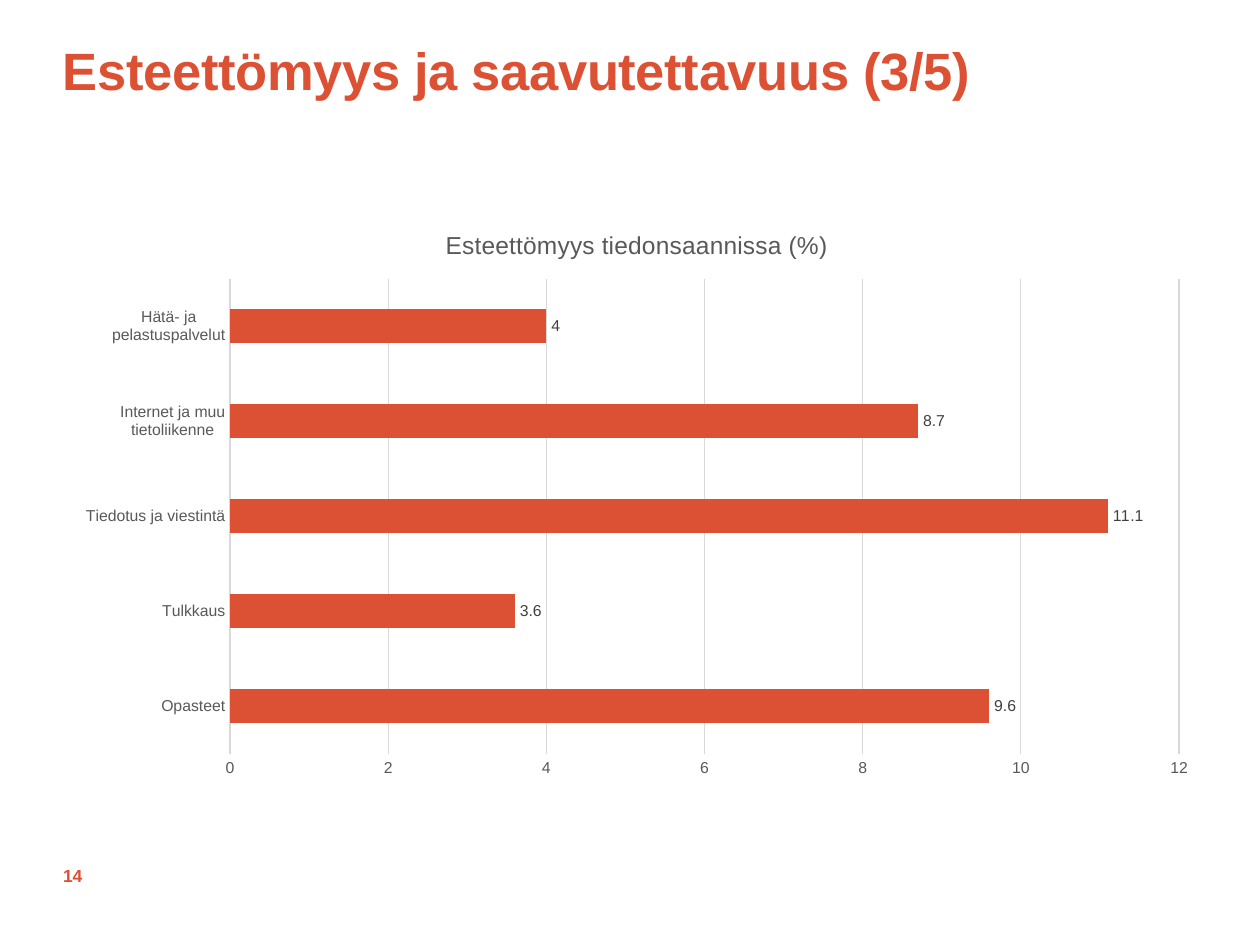
from pptx import Presentation
from pptx import util as u
from pptx.chart.data import CategoryChartData
from pptx.dml.color import RGBColor
from pptx.enum import chart as ch, text

FONT = "Arial"
COLORS = {"accent": "DC5034", "axis": "595959", "label": "404040",
          "grid": "D9D9D9", "base": "000000"}
VALUES = {
    "Opasteet": 9.6,
    "Tulkkaus": 3.6,
    "Tiedotus ja viestintä": 11.1,
    "Internet ja muu tietoliikenne": 8.7,
    "Hätä- ja pelastuspalvelut": 4,
}


def rgb(name):
    return RGBColor.from_string(COLORS[name])


def style_font(font, size, color, bold=False):
    for key, value in {"name": FONT, "size": u.Pt(size), "bold": bold}.items():
        setattr(font, key, value)
    font.color.rgb = rgb(color)


def style_line(line, color="grid", width=0.75):
    line.color.rgb = rgb(color)
    line.width = u.Pt(width)


def add_text(s, box, content, size, anchor, spacing=None):
    sp = s.shapes.add_textbox(*map(u.Inches, box))
    tf = sp.text_frame
    layout = {"word_wrap": True, "vertical_anchor": anchor, "margin_left": 0,
              "margin_top": 0, "margin_right": 0, "margin_bottom": 0}
    for key, value in layout.items():
        setattr(tf, key, value)
    r = tf.paragraphs[0].add_run()
    r.text = content
    style_font(r.font, size, "accent", bold=True)
    if spacing is not None:
        r._r.get_or_add_rPr().set("spc", str(spacing))


def style_axis(axis):
    axis.major_tick_mark = axis.minor_tick_mark = ch.XL_TICK_MARK.NONE
    style_font(axis.tick_labels.font, 9, "axis")


def add_bar_chart(s, box, title, values):
    data = CategoryChartData()
    data.categories = list(values)
    data.add_series("Series 1", list(values.values()))
    chart = s.shapes.add_chart(ch.XL_CHART_TYPE.BAR_CLUSTERED,
                               *map(u.Inches, box), data).chart
    style_font(chart.font, 10, "base")
    chart.has_legend = False

    # Chart title
    chart.has_title = True
    tf = chart.chart_title.text_frame
    tf.text = title
    style_font(tf.paragraphs[0].runs[0].font, 14, "axis")
    chart.chart_title.include_in_layout = False

    # Axes and gridlines
    cat, val = chart.category_axis, chart.value_axis
    for axis in (cat, val):
        style_axis(axis)
    style_line(cat.format.line)
    val.format.line.fill.background()
    val.has_major_gridlines = True
    style_line(val.major_gridlines.format.line)
    val.minimum_scale, val.maximum_scale, val.major_unit = 0, 12, 2

    # Bars and value labels
    plot = chart.plots[0]
    plot.gap_width = 182
    plot.vary_by_categories = False
    series = plot.series[0]
    series.format.fill.solid()
    series.format.fill.fore_color.rgb = rgb("accent")
    labels = series.data_labels
    labels.show_value = True
    labels.position = ch.XL_LABEL_POSITION.OUTSIDE_END
    style_font(labels.font, 9, "label")


def main():
    prs = Presentation()
    prs.slide_width, prs.slide_height = u.Inches(10), u.Inches(7.5)
    s = prs.slides.add_slide(prs.slide_layouts[6])

    # Heading
    add_text(s, (0.5, 0.3, 9, 1.16), "Esteettömyys ja saavutettavuus (3/5)",
             30, text.MSO_ANCHOR.TOP, spacing=-20)
    # Chart
    add_bar_chart(s, (0.5, 1.64, 9.11, 4.62),
                  "Esteettömyys tiedonsaannissa (%)", VALUES)
    # Page number
    add_text(s, (0.5, 6.75, 0.71, 0.4), "14", 10, text.MSO_ANCHOR.MIDDLE)

    prs.save("out.pptx")


if __name__ == "__main__":
    main()
